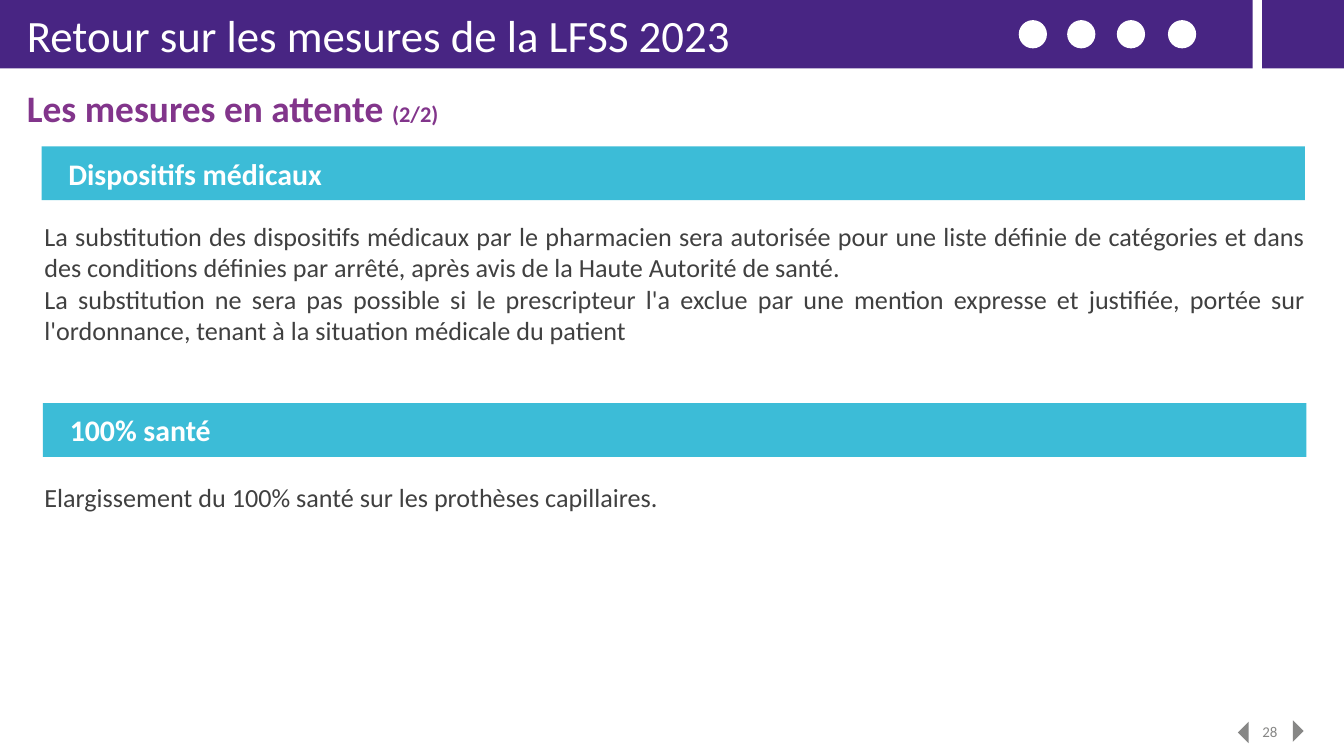
"""Build the slide on the pending measures of the LFSS 2023."""
from dataclasses import dataclass

from pptx import Presentation
from pptx import util as u
from pptx.dml.color import RGBColor
from pptx.enum import shapes, text

WIDTH = 10
HEIGHT = WIDTH * 9 / 16
PURPLE, VIOLET, CYAN = "482583", "82358B", "3CBCD7"
WHITE, GREY, DARK = "FFFFFF", "878786", "404040"
BAND_HEIGHT, MARGIN = 0.51, 0.2
KIND, ANCHOR, ALIGN = shapes.MSO_SHAPE, text.MSO_ANCHOR, text.PP_ALIGN


@dataclass(frozen=True)
class Box:
    """A frame in inches."""
    left: float
    top: float
    width: float
    height: float

    def lengths(self) -> list:
        """Return the frame as slide lengths."""
        return [u.Inches(v) for v in (self.left, self.top, self.width, self.height)]


@dataclass(frozen=True)
class Style:
    """The look of a text."""
    size: float
    color: str
    bold: bool = False
    align: ALIGN = ALIGN.LEFT
    anchor: ANCHOR = ANCHOR.TOP
    inset: tuple = (0, 0)


@dataclass(frozen=True)
class Section:
    """A headed bar with the paragraphs below it."""
    bar: Box
    heading: str
    body: Box
    paragraphs: tuple


TITLE = Style(24, WHITE)
SUBTITLE = Style(20, VIOLET, bold=True)
HEADING = Style(16, WHITE, bold=True, anchor=ANCHOR.MIDDLE, inset=(0.2, 0.12))
BODY = Style(14, DARK, align=ALIGN.JUSTIFY)
NUMBER = Style(8, GREY, align=ALIGN.CENTER, anchor=ANCHOR.BOTTOM)

SECTIONS = (
    Section(Box(0.31, 1.09, 9.4, 0.4), "Dispositifs médicaux", Box(0.33, 1.64, 9.39, 0.94), (
        "La substitution des dispositifs médicaux par le pharmacien sera autorisée pour une liste "
        "définie de catégories et dans des conditions définies par arrêté, après avis de la Haute "
        "Autorité de santé.",
        "La substitution ne sera pas possible si le prescripteur l'a exclue par une mention "
        "expresse et justifiée, portée sur l'ordonnance, tenant à la situation médicale du patient",
    )),
    Section(Box(0.32, 3, 9.4, 0.4), "100% santé", Box(0.33, 3.58, 9.39, 0.24), (
        "Elargissement du 100% santé sur les prothèses capillaires.",
    )),
)


def rgb(value: str) -> RGBColor:
    """Turn a hex string into a colour."""
    return RGBColor.from_string(value)


def apply(target, values: dict) -> None:
    """Set each named attribute of the target."""
    for name, value in values.items():
        setattr(target, name, value)


def write(sp, paragraphs: tuple, style: Style) -> None:
    """Write paragraphs, each a string or a tuple of (text, size) runs."""
    tf = sp.text_frame
    across, down = (u.Inches(v) for v in style.inset)
    apply(tf, {"word_wrap": True, "auto_size": text.MSO_AUTO_SIZE.NONE,
               "vertical_anchor": style.anchor, "margin_left": across,
               "margin_right": across, "margin_top": down, "margin_bottom": down})
    for i, content in enumerate(paragraphs):
        p = tf.add_paragraph() if i else tf.paragraphs[0]
        p.alignment = style.align
        runs = ((content, style.size),) if isinstance(content, str) else content
        for words, size in runs:
            r = p.add_run()
            r.text = words
            apply(r.font, {"name": "Calibri", "size": u.Pt(size), "bold": style.bold})
            r.font.color.rgb = rgb(style.color)


def add_shape(parent, kind: KIND, box: Box, fill: str, rotation: float = 0):
    """Add a plain filled shape."""
    sp = parent.shapes.add_shape(kind, *box.lengths())
    sp.shadow.inherit = False
    sp.fill.solid()
    sp.fill.fore_color.rgb = rgb(fill)
    sp.line.fill.background()
    sp.rotation = rotation
    return sp


def add_text(s, box: Box, paragraphs: tuple, style: Style) -> None:
    """Add a text box."""
    write(s.shapes.add_textbox(*box.lengths()), paragraphs, style)


def add_title(s, box: Box, words: str) -> None:
    """Place the title placeholder in front of the band."""
    sp = s.shapes.title
    apply(sp, dict(zip(("left", "top", "width", "height"), box.lengths())))
    write(sp, (words,), TITLE)
    sp.element.getparent().append(sp.element)


def add_section(s, section: Section) -> None:
    """Draw a heading bar and its text."""
    bar = add_shape(s, KIND.RECTANGLE, section.bar, CYAN)
    write(bar, (section.heading,), HEADING)
    add_text(s, section.body, section.paragraphs, BODY)


def main() -> None:
    """Build and save the slide."""
    prs = Presentation()
    apply(prs, {"slide_width": u.Inches(WIDTH), "slide_height": u.Inches(HEIGHT)})
    s = prs.slides.add_slide(prs.slide_layouts[5])
    for left, right in ((0, 9.32), (9.39, WIDTH)):
        add_shape(s, KIND.RECTANGLE, Box(left, 0, right - left, BAND_HEIGHT), PURPLE)
    add_title(s, Box(MARGIN, 0.06, 9.07, 0.4), "Retour sur les mesures de la LFSS 2023")
    add_text(s, Box(MARGIN, 0.63, 9.07, 0.28),
             ((("Les mesures en attente ", 20), ("(2/2)", 12)),), SUBTITLE)
    for section in SECTIONS:
        add_section(s, section)
    add_text(s, Box(9.23, 5.21, 0.44, 0.3), ("28",), NUMBER)
    for left, top, rotation in ((9.17, 5.41, 270), (9.58, 5.4, 90)):
        add_shape(s, KIND.ISOSCELES_TRIANGLE, Box(left, top, 0.16, 0.08), GREY, rotation)
    dots = s.shapes.add_group_shape()
    for left in (7.58, 7.94, 8.31, 8.69):
        add_shape(dots, KIND.OVAL, Box(left, 0.15, 0.21, 0.21), WHITE)
    prs.save("out.pptx")


if __name__ == "__main__":
    main()
